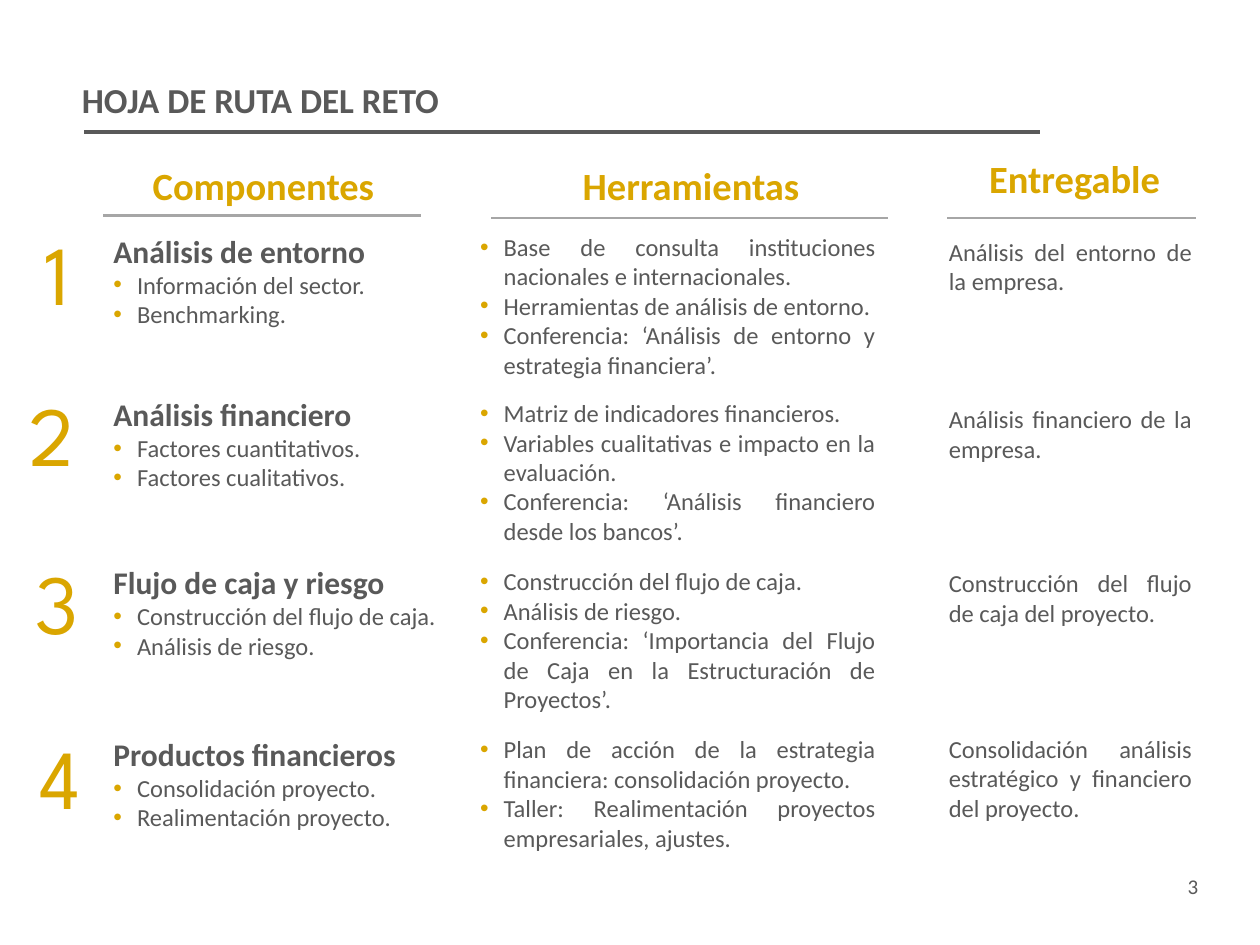
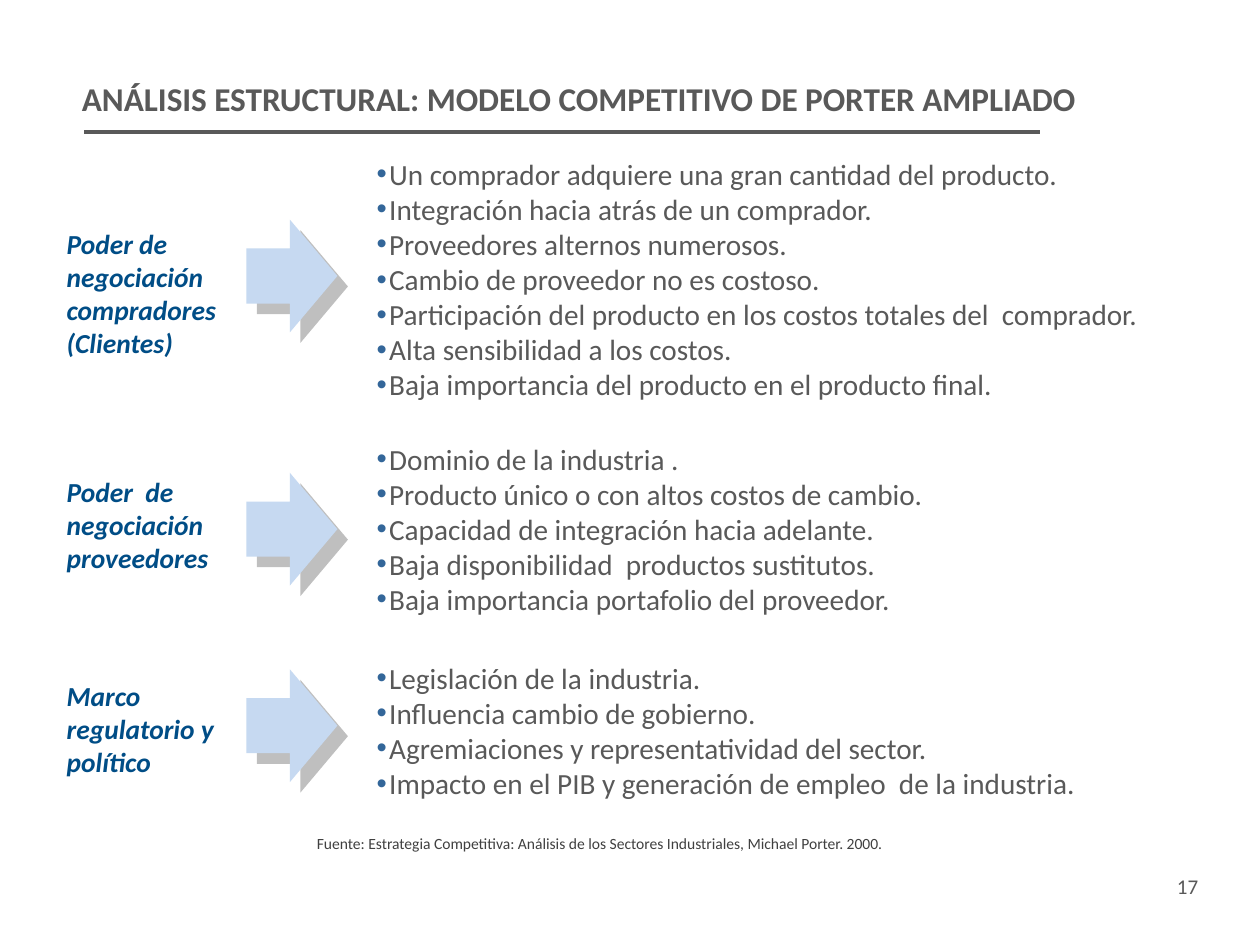
from lxml.etree import SubElement
from pptx import Presentation
from pptx.dml.color import RGBColor as Rgb
from pptx.enum.shapes import MSO_CONNECTOR as Link, MSO_SHAPE as Form
from pptx.enum.text import MSO_ANCHOR as Anchor, MSO_AUTO_SIZE as Fit, PP_ALIGN as Align
from pptx.oxml.ns import qn
from pptx.util import Pt

INK = {
    "text": "595959", "gold": "DAA600", "rule": "A6A6A6", "blue": "004D86",
    "dot": "336699", "arrow": "C6D9F1", "shade": "808080", "note": "404040",
}


def style(size, color="text", align=Align.LEFT, bold=False, italic=False,
          name="Calibri", dot=None, indent=0):
    font = {"size": Pt(size), "bold": bold, "italic": italic, "name": name}
    return {"font": font, "color": color, "align": align, "dot": dot, "indent": indent}


STYLES = {
    "title": style(20, bold=True),
    "long": style(19, bold=True),
    "page": style(12, align=Align.RIGHT),
    "column": style(22, "gold", Align.CENTER, bold=True),
    "number": style(48, "gold", Align.CENTER, name="League Spartan"),
    "head": style(18, align=Align.JUSTIFY, bold=True),
    "item": style(14, align=Align.JUSTIFY, dot="gold", indent=13.5),
    "plain": style(14, align=Align.JUSTIFY),
    "force": style(15.7, "blue", bold=True, italic=True),
    "trait": style(16.7, align=Align.JUSTIFY, dot="dot", indent=7.2),
    "source": style(8.9, "note", Align.CENTER),
}


class Deck:
    def __init__(self):
        self.file = Presentation()
        self.file.slide_width, self.file.slide_height = Pt(720), Pt(540)

    def start(self, title, page, look="title"):
        self.slide = self.file.slides.add_slide(self.file.slide_layouts[4])
        first, *self.free = self.slide.placeholders
        self.fill(first, (39.6, 41, 631.4, 46), [(title, look, 0)])
        self.line(48.2, 594, 75.6, "text", 2)
        self.text((658, 495.4, 33.8, 28.8), [(page, "page", 0)])

    def fill(self, shape, box, rows):
        for key, value in zip(("left", "top", "width", "height"), box):
            setattr(shape, key, Pt(value))
        frame = shape.text_frame
        frame.word_wrap, frame.auto_size = True, Fit.NONE
        frame.vertical_anchor = Anchor.TOP
        for count, (words, look, gap) in enumerate(rows):
            para = frame.add_paragraph() if count else frame.paragraphs[0]
            self.dress(para, words, STYLES[look], gap)

    def dress(self, para, words, look, gap):
        props = para._p.get_or_add_pPr()
        props.set("marL", str(Pt(look["indent"])))
        props.set("indent", str(-Pt(look["indent"])))
        if look["dot"]:
            tint = SubElement(props, qn("a:buClr"))
            SubElement(tint, qn("a:srgbClr"), val=INK[look["dot"]])
            SubElement(props, qn("a:buFont"), typeface="Arial")
            SubElement(props, qn("a:buChar"), char="•")
        else:
            SubElement(props, qn("a:buNone"))
        para.alignment, para.space_before = look["align"], Pt(gap)
        run = para.add_run()
        run.text = words
        for key, value in look["font"].items():
            setattr(run.font, key, value)
        run.font.color.rgb = Rgb.from_string(INK[look["color"]])

    def text(self, box, rows):
        self.fill(self.slide.shapes.add_textbox(0, 0, 0, 0), box, rows)

    def list(self, box, rows):
        self.fill(self.free.pop(0), box, rows)

    def line(self, left, right, top, color, width):
        line = self.slide.shapes.add_connector(
            Link.STRAIGHT, Pt(left), Pt(top), Pt(right), Pt(top))
        line.line.color.rgb = Rgb.from_string(INK[color])
        line.line.width = Pt(width)
        SubElement(line._element.spPr, qn("a:effectLst"))

    def arrow(self, left, top):
        shape = self.slide.shapes.add_shape(
            Form.RIGHT_ARROW, Pt(left), Pt(top), Pt(49.7), Pt(59))
        tint = Rgb.from_string(INK["arrow"])
        shape.fill.solid()
        shape.fill.fore_color.rgb = tint
        shape.line.color.rgb = tint
        shape.line.width = Pt(2)
        shape.shadow.inherit = False
        props = shape._element.spPr
        SubElement(props.find(qn("a:ln")), qn("a:miter"), lim="800000")
        cast = SubElement(props.find(qn("a:effectLst")), qn("a:outerShdw"),
                          blurRad="0", dist=str(Pt(8.5)), dir="2700000",
                          algn="ctr", rotWithShape="0")
        shade = SubElement(cast, qn("a:srgbClr"), val=INK["shade"])
        SubElement(shade, qn("a:alpha"), val="50000")

    def end(self):
        for spare in self.free:
            spare._element.getparent().remove(spare._element)


def stack(groups, gaps, look, first=None):
    return [(words, first if first and not spot else look, 0 if spot else gap)
            for group, gap in zip(groups, (0, *gaps))
            for spot, words in enumerate(group)]


PARTS = [
    ["Análisis de entorno", "Información del sector.", "Benchmarking."],
    ["Análisis financiero", "Factores cuantitativos.", "Factores cualitativos."],
    ["Flujo de caja y riesgo", "Construcción del flujo de caja.", "Análisis de riesgo."],
    ["Productos financieros", "Consolidación proyecto.", "Realimentación proyecto."],
]
TOOLS = [
    ["Base de consulta instituciones nacionales e internacionales.",
     "Herramientas de análisis de entorno.",
     "Conferencia: ‘Análisis de entorno y estrategia financiera’."],
    ["Matriz de indicadores financieros.",
     "Variables cualitativas e impacto en la evaluación.",
     "Conferencia: ‘Análisis financiero desde los bancos’."],
    ["Construcción del flujo de caja.", "Análisis de riesgo.",
     "Conferencia: ‘Importancia del Flujo de Caja en la Estructuración de Proyectos’."],
    ["Plan de acción de la estrategia financiera: consolidación proyecto.",
     "Taller: Realimentación proyectos empresariales, ajustes."],
]
GOALS = [
    ["Análisis del entorno de la empresa."],
    ["Análisis financiero de la empresa."],
    ["Construcción del flujo de caja del proyecto."],
    ["Consolidación análisis estratégico y financiero del proyecto."],
]
COLUMNS = [
    ("Componentes", (29.5, 89.3, 242, 33.8), (59, 240.5, 123.1),
     (57.6, 128.9, 225.4, 353.5), stack(PARTS, (38, 41, 43), "item", "head")),
    ("Herramientas", (282.2, 89.3, 225.4, 33.8), (280.8, 507.6, 124.6),
     (267.1, 128.9, 240.5, 369), stack(TOOLS, (11, 12, 12), "item")),
    ("Entregable", (543.6, 85, 141, 33.8), (541.4, 683.3, 124.6),
     (535, 131.8, 153.4, 355.7), stack(GOALS, (62, 60, 61), "plain")),
]
STEPS = [(4.3, 123.1), (1.4, 215.3), (4.3, 311), (5.8, 411.1)]
FORCES = [
    (["Poder de negociación compradores", "(Clientes)"], 126, 128.2, 85.7,
     ["Un comprador adquiere una gran cantidad del producto.",
      "Integración hacia atrás de un comprador.",
      "Proveedores alternos numerosos.",
      "Cambio de proveedor no es costoso.",
      "Participación del producto en los costos totales del  comprador.",
      "Alta sensibilidad a los costos.",
      "Baja importancia del producto en el producto final."]),
    (["Poder  de negociación proveedores"], 267.8, 272.9, 248.4,
     ["Dominio de la industria .",
      "Producto único o con altos costos de cambio.",
      "Capacidad de integración hacia adelante.",
      "Baja disponibilidad  productos sustitutos.",
      "Baja importancia portafolio del proveedor."]),
    (["Marco regulatorio y político"], 384.5, 385.2, 373.7,
     ["Legislación de la industria.",
      "Influencia cambio de gobierno.",
      "Agremiaciones y representatividad del sector.",
      "Impacto en el PIB y generación de empleo  de la industria."]),
]


def route(deck):
    deck.start("HOJA DE RUTA DEL RETO", "3")
    for name, box, rule, area, rows in COLUMNS:
        deck.text(box, [(name, "column", 0)])
        deck.line(*rule, "rule", 1.5)
        deck.list(area, rows)
    for step, (left, top) in enumerate(STEPS, 1):
        deck.text((left, top, 56.9, 65.5), [(str(step), "number", 0)])
    deck.end()


def porter(deck):
    deck.start("ANÁLISIS ESTRUCTURAL: MODELO COMPETITIVO DE PORTER AMPLIADO", "17", "long")
    for names, top, tip, high, traits in FORCES:
        deck.text((31, top, 122.4, 64 + 19.5 * (len(names) - 1)),
                  stack([names], (), "force"))
        deck.arrow(141.8, tip)
        deck.list((208, high, 509, 8 + 20.1 * len(traits)), stack([traits], (), "trait"))
    note = ("Fuente: Estrategia Competitiva: Análisis de los Sectores Industriales, "
            "Michael Porter. 2000.")
    deck.text((118, 473, 449.3, 18), [(note, "source", 0)])
    deck.end()


def main():
    deck = Deck()
    route(deck)
    porter(deck)
    deck.file.save("out.pptx")


if __name__ == "__main__":
    main()
